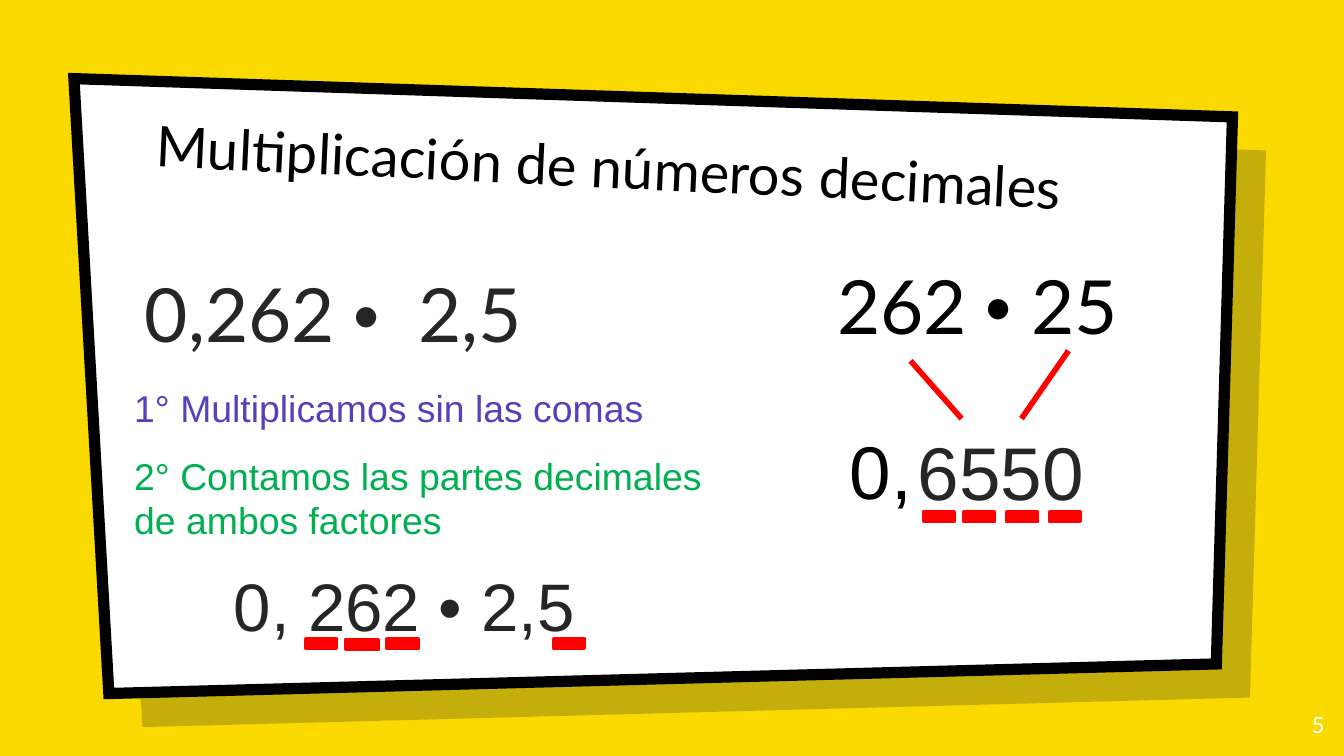
from lxml import etree
from pptx import Presentation
from pptx.dml.color import RGBColor
from pptx.enum.shapes import MSO_CONNECTOR, MSO_SHAPE
from pptx.enum.text import MSO_ANCHOR, MSO_AUTO_SIZE, PP_ALIGN
from pptx.oxml.ns import qn
from pptx.util import Pt

EMU_PER_PX = 4572
MINUS = MSO_SHAPE.MATH_MINUS
STRAIGHT = MSO_CONNECTOR.STRAIGHT
TOP, BOTTOM = MSO_ANCHOR.TOP, MSO_ANCHOR.BOTTOM
LEFT, RIGHT = PP_ALIGN.LEFT, PP_ALIGN.RIGHT
FIT_SHAPE = MSO_AUTO_SIZE.SHAPE_TO_FIT_TEXT

YELLOW, NAVY, WHITE, BLACK = "FAD900", "001936", "FFFFFF", "000000"
RED, DARK, PURPLE, GREEN = "FF0000", "262626", "5243BB", "00B050"
LATO, ARIAL = "Lato", "Arial"


def px(value):
    return value * EMU_PER_PX


def color(hex_string):
    return RGBColor.from_string(hex_string)


def write(frame, runs, font=ARIAL, size=20, fill=BLACK, align=LEFT, spacing=None):
    paragraph = frame.paragraphs[0]
    paragraph.alignment = align
    if spacing:
        paragraph.line_spacing = spacing
    if isinstance(runs, str):
        runs = [(runs, font)]
    for text, run_font in runs:
        run = paragraph.add_run()
        run.text = text
        run.font.name = run_font
        run.font.size = Pt(size)
        run.font.color.rgb = color(fill)


class SlideBuilder:
    def __init__(self, slide):
        self.slide = slide
        self.shapes = slide.shapes

    def background(self, fill):
        self.slide.background.fill.solid()
        self.slide.background.fill.fore_color.rgb = color(fill)

    def paint(self, shape, fill, line=None, width=0, alpha=None):
        shape.shadow.inherit = False
        shape.fill.solid()
        shape.fill.fore_color.rgb = color(fill)
        if alpha:
            solid = shape.fill._xPr.find(qn("a:solidFill"))
            etree.SubElement(solid[0], qn("a:alpha"), val=str(alpha * 1000))
        if line:
            shape.line.color.rgb = color(line)
            shape.line.width = Pt(width)
        else:
            shape.line.fill.background()

    def panel(self, points, **style):
        corners = [(px(x), px(y)) for x, y in points]
        builder = self.shapes.build_freeform(*corners[0])
        builder.add_line_segments(corners[1:], close=True)
        shape = builder.convert_to_shape()
        self.paint(shape, **style)
        etree.SubElement(shape.line._get_or_add_ln(), qn("a:miter"), lim="800000")

    def text(self, box, runs, inset=10, anchor=TOP, rotation=0, wrap=True, **style):
        shape = self.shapes.add_textbox(*map(px, box))
        shape.rotation = rotation
        frame = shape.text_frame
        frame.word_wrap = wrap
        if not wrap:
            frame.auto_size = FIT_SHAPE
        frame.vertical_anchor = anchor
        frame.margin_left = frame.margin_right = px(20)
        frame.margin_top = frame.margin_bottom = px(inset)
        write(frame, runs, **style)

    def digit_mark(self, left, top, width=62, height=60):
        shape = self.shapes.add_shape(MINUS, *map(px, (left, top, width, height)))
        self.paint(shape, RED, line=RED, width=2)

    def line(self, start, end):
        connector = self.shapes.add_connector(STRAIGHT, *map(px, start + end))
        connector.line.color.rgb = color(RED)
        connector.line.width = Pt(3)
        etree.SubElement(connector._element.spPr, qn("a:effectLst"))


def main():
    presentation = Presentation()
    presentation.slide_width = px(2000)
    presentation.slide_height = px(1125)
    builder = SlideBuilder(presentation.slides.add_slide(presentation.slide_layouts[6]))
    builder.background(YELLOW)

    panel = [(110, 117), (1834, 174), (1810, 988), (162, 1032)]
    builder.panel([(x + 50, y + 50) for x, y in panel], fill=NAVY, alpha=22)
    builder.panel(panel, fill=WHITE, line=BLACK, width=6)

    builder.text((213, 154, 1538, 166), "Multiplicación de números decimales",
                 inset=20, anchor=BOTTOM, rotation=2.7, font=LATO, size=30)
    builder.text((1871, 1039, 120, 86), "5", inset=20, font=LATO, size=12,
                 fill=WHITE, align=RIGHT)

    builder.text((196, 389, 928, 128), [("0,262 ", LATO), ("•", ARIAL), ("  2,5", LATO)],
                 size=40, fill=DARK)
    builder.text((180, 563, 804, 88), "1° Multiplicamos sin las comas",
                 wrap=False, fill=PURPLE)
    builder.text((328, 830, 664, 232), "0, 262 • 2,5", size=36, fill=DARK)
    for left, width, height in ((568, 62, 60), (506, 66, 62), (816, 62, 60), (447, 62, 60)):
        builder.digit_mark(left, 928, width, height)
    builder.text((180, 664, 924, 212),
                 "2° Contamos las partes decimales de ambos factores", fill=GREEN)

    builder.text((1226, 382, 500, 182), [("262 ", LATO), ("•", ARIAL), (" 25", LATO)],
                 inset=20, size=40, spacing=0.9)
    builder.line((1355, 537), (1431, 623))
    builder.line((1520, 623), (1590, 522))
    builder.text((1346, 624, 354, 198), "6550", size=40, fill=DARK)
    for left in (1554, 1490, 1426, 1366):
        builder.digit_mark(left, 739)
    builder.text((1245, 623, 134, 154), "0,", wrap=False, size=40)

    presentation.save("out.pptx")


if __name__ == "__main__":
    main()
